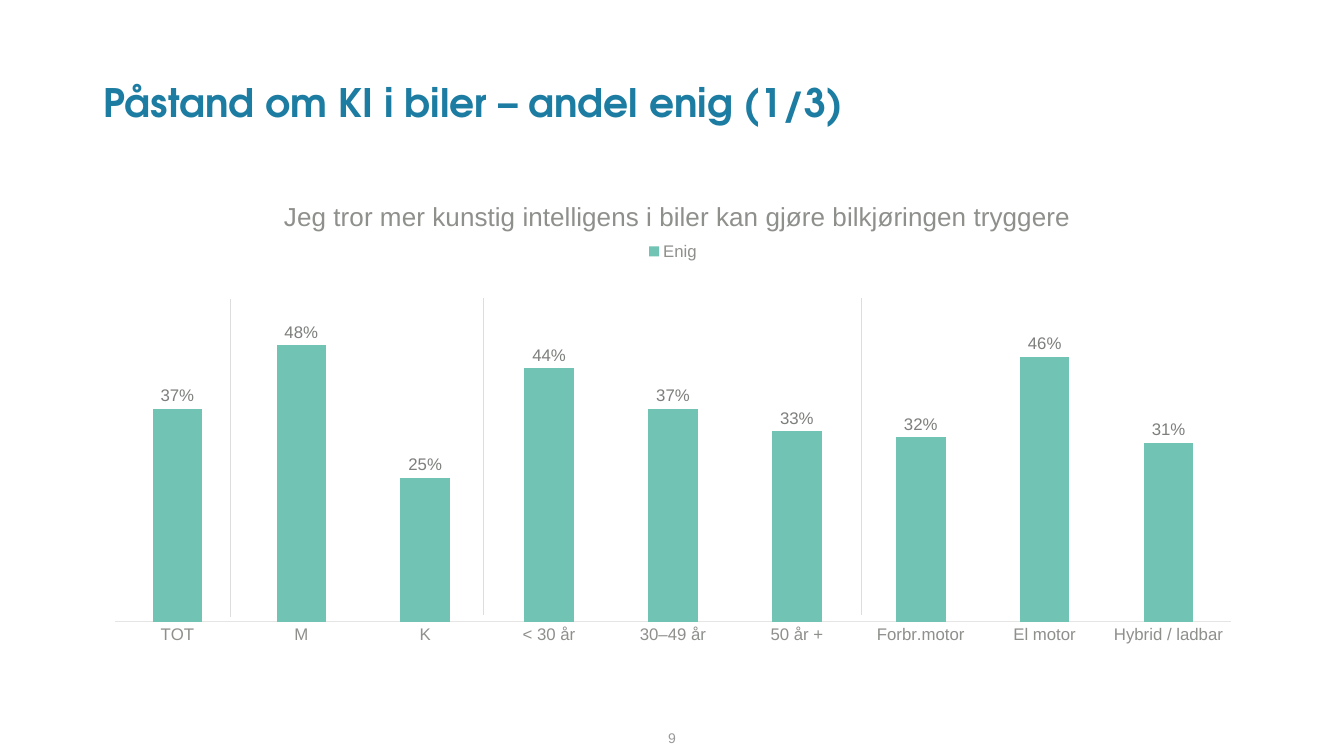
from dataclasses import dataclass

from lxml.etree import SubElement
from pptx import Presentation
from pptx.chart.chart import Chart
from pptx.chart.data import CategoryChartData
from pptx.dml.color import RGBColor
from pptx.enum.chart import (XL_CHART_TYPE, XL_LABEL_POSITION,
                             XL_LEGEND_POSITION, XL_TICK_MARK)
from pptx.enum.shapes import MSO_CONNECTOR
from pptx.enum.text import MSO_ANCHOR, PP_ALIGN
from pptx.oxml.ns import qn
from pptx.slide import Slide
from pptx.util import Pt

PX = 9525


@dataclass(frozen=True)
class Theme:
    heading_font: str = "TeX Gyre Adventor"
    body_font: str = "Arial"
    heading: str = "1C7CA1"
    bar: str = "71C3B3"
    axis_text: str = "8E908C"
    label_text: str = "7C7F7B"
    number_text: str = "989998"
    axis_line: str = "E5E5E4"
    divider: str = "DCDDDC"
    heading_size: float = 28
    chart_title_size: float = 18.6
    chart_size: float = 12
    number_size: float = 10


@dataclass(frozen=True)
class Box:
    left: int
    top: int
    width: int
    height: int

    def emu(self) -> tuple[int, int, int, int]:
        return (self.left * PX, self.top * PX,
                self.width * PX, self.height * PX)


@dataclass(frozen=True)
class Divider:
    x: int
    top: int
    bottom: int


THEME = Theme()
CHART_BOX = Box(88, 163, 1106, 459)
CHART_TITLE_BOX = Box(266, 185, 748, 30)
LEGEND_BOX = Box(610, 228, 62, 23)
PLOT_BOX = Box(110, 263, 1062, 329)
DIVIDERS = [Divider(219, 285, 588), Divider(460, 284, 586),
            Divider(820, 284, 586)]
SHARES = {"TOT": 0.37, "M": 0.48, "K": 0.25,
          "< 30 år": 0.44, "30–49 år": 0.37, "50 år +": 0.33,
          "Forbr.motor": 0.32, "El motor": 0.46, "Hybrid / ladbar": 0.31}


def style_font(font, size: float, color: str,
               name: str = THEME.body_font, bold: bool = False) -> None:
    font.name, font.size, font.bold = name, Pt(size), bold
    font.color.rgb = RGBColor.from_string(color)


def add_heading(s: Slide) -> None:
    title = s.shapes.title
    title.left, title.top, title.width, title.height = Box(89, 37, 1106, 88).emu()
    tf = title.text_frame
    tf.text = "Påstand om KI i biler – andel enig (1/3)"
    tf.vertical_anchor = MSO_ANCHOR.BOTTOM
    p = tf.paragraphs[0]
    p.alignment, p.line_spacing = PP_ALIGN.LEFT, 0.9
    style_font(p.runs[0].font, THEME.heading_size, THEME.heading,
               THEME.heading_font, bold=True)


def add_page_number(s: Slide) -> None:
    tf = s.shapes.add_textbox(*Box(604, 686, 72, 34).emu()).text_frame
    tf.word_wrap = True
    tf.vertical_anchor = MSO_ANCHOR.MIDDLE
    tf.text = "9"
    p = tf.paragraphs[0]
    p.alignment = PP_ALIGN.CENTER
    style_font(p.runs[0].font, THEME.number_size, THEME.number_text)


def set_layout(chart: Chart, tag: str, index: int, box: Box,
               inner: bool = False, sized: bool = True) -> None:
    """Fix a chart part at a slide position, as fractions of the chart."""
    part = chart.element.find(f".//{qn(tag)}")
    for old in part.findall(qn("c:layout")):
        part.remove(old)
    layout = SubElement(part, qn("c:layout"))
    part.insert(index, layout)
    manual = SubElement(layout, qn("c:manualLayout"))
    settings = {"layoutTarget": "inner"} if inner else {}
    settings |= {"xMode": "edge", "yMode": "edge",
                 "x": (box.left - CHART_BOX.left) / CHART_BOX.width,
                 "y": (box.top - CHART_BOX.top) / CHART_BOX.height}
    if sized:
        settings |= {"w": box.width / CHART_BOX.width,
                     "h": box.height / CHART_BOX.height}
    for name, value in settings.items():
        SubElement(manual, qn(f"c:{name}")).set("val", str(value))


def add_share_chart(s: Slide) -> None:
    data = CategoryChartData(number_format="0%")
    data.categories = list(SHARES)
    data.add_series("Enig", list(SHARES.values()))
    chart = s.shapes.add_chart(XL_CHART_TYPE.COLUMN_CLUSTERED,
                               *CHART_BOX.emu(), data).chart
    style_font(chart.font, THEME.chart_size, THEME.axis_text)

    chart.has_title = True
    tf = chart.chart_title.text_frame
    tf.text = "Jeg tror mer kunstig intelligens i biler kan gjøre bilkjøringen tryggere"
    style_font(tf.paragraphs[0].runs[0].font, THEME.chart_title_size,
               THEME.axis_text)

    chart.has_legend = True
    chart.legend.position = XL_LEGEND_POSITION.TOP
    chart.legend.include_in_layout = False
    style_font(chart.legend.font, THEME.chart_size, THEME.axis_text)

    axis = chart.category_axis
    axis.major_tick_mark = axis.minor_tick_mark = XL_TICK_MARK.NONE
    axis.format.line.color.rgb = RGBColor.from_string(THEME.axis_line)
    axis.format.line.width = Pt(0.75)
    style_font(axis.tick_labels.font, THEME.chart_size, THEME.axis_text)
    values = chart.value_axis
    values.minimum_scale, values.maximum_scale = 0, 0.6
    values.has_major_gridlines = False
    values.visible = False

    plot = chart.plots[0]
    plot.gap_width, plot.overlap = 150, -25
    plot.vary_by_categories = False
    fill = plot.series[0].format.fill
    fill.solid()
    fill.fore_color.rgb = RGBColor.from_string(THEME.bar)
    labels = plot.series[0].data_labels
    labels.show_value = True
    labels.number_format, labels.number_format_is_linked = "0%", False
    labels.position = XL_LABEL_POSITION.OUTSIDE_END
    style_font(labels.font, THEME.chart_size, THEME.label_text)

    set_layout(chart, "c:title", 1, CHART_TITLE_BOX, sized=False)
    set_layout(chart, "c:legend", 1, LEGEND_BOX)
    set_layout(chart, "c:plotArea", 0, PLOT_BOX, inner=True)


def add_divider(s: Slide, divider: Divider) -> None:
    line = s.shapes.add_connector(
        MSO_CONNECTOR.STRAIGHT, divider.x * PX, divider.top * PX,
        divider.x * PX, divider.bottom * PX)
    line.line.color.rgb = RGBColor.from_string(THEME.divider)
    line.line.width = Pt(0.5)
    SubElement(line.element.spPr, qn("a:effectLst"))


def main() -> None:
    prs = Presentation()
    prs.slide_width, prs.slide_height = 1280 * PX, 720 * PX
    s = prs.slides.add_slide(prs.slide_layouts.get_by_name("Title Only"))
    add_heading(s)
    add_page_number(s)
    add_share_chart(s)
    for divider in DIVIDERS:
        add_divider(s, divider)
    prs.save("out.pptx")


if __name__ == "__main__":
    main()
